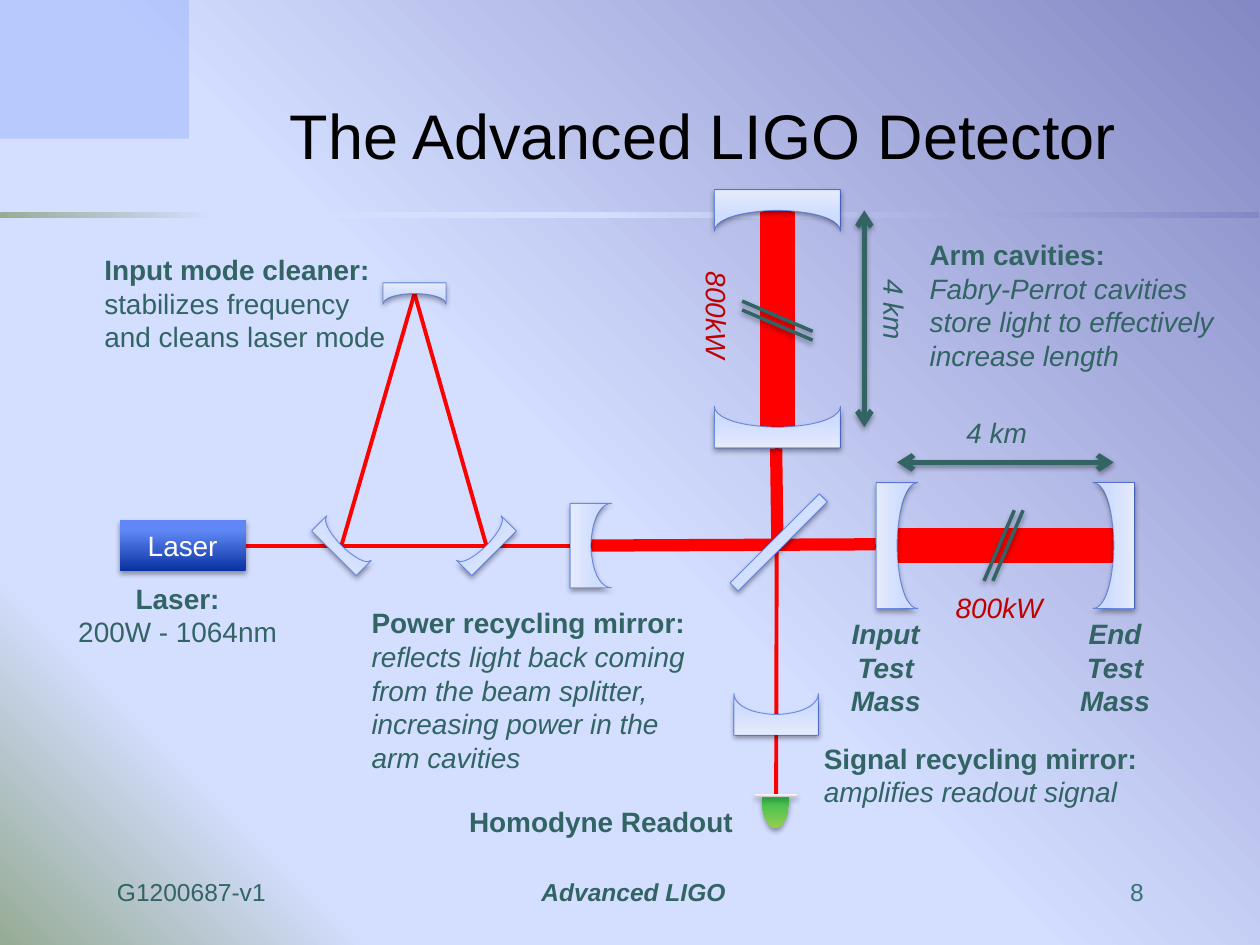
from lxml.etree import SubElement
from pptx import Presentation
from pptx.dml.color import RGBColor
from pptx.enum.shapes import MSO_CONNECTOR, MSO_SHAPE
from pptx.enum.text import MSO_ANCHOR, PP_ALIGN
from pptx.oxml.ns import qn
from pptx.util import Inches, Pt

THEME = {
    "font": "Arial", "title_size": 36, "label_size": 16, "footer_size": 14,
    "title": "000000", "text": "326464", "page": "377373", "power": "C00000",
    "white": "FFFFFF", "beam": "FF0000", "corner": "7095FD", "edge": "0337C6",
    "backdrop": [(0, "8488C4"), (53, "D4DEFF"), (83, "D4DEFF"), (100, "96AB94")],
    "laser": [(0, "0A31A1"), (80, "5F87F5"), (100, "5F87F5")],
    "glass": [(0, "CFDCFE"), (35, "CFDCFE"), (100, "E4EBFC")],
    "diode": [(0, "92D050"), (80, "00B050"), (100, "F8F8F8")],
    "metal": [(0, "BEBEBE"), (80, "F7F7F7"), (100, "F8F8F8")],
}


def paint_gradient(fill, parent, stops, angle=None):
    """Fill with several stops; without an angle, radiate from the top right."""
    fill.solid()
    old = parent.find(qn("a:solidFill"))
    gradient = parent.makeelement(qn("a:gradFill"), {"rotWithShape": "1"})
    stop_list = SubElement(gradient, qn("a:gsLst"))
    for position, color in stops:
        stop = SubElement(stop_list, qn("a:gs"), pos=str(position * 1000))
        SubElement(stop, qn("a:srgbClr"), val=color)
    if angle is None:
        radial = SubElement(gradient, qn("a:path"), {"path": "circle"})
        SubElement(radial, qn("a:fillToRect"), l="100000", b="100000")
    else:
        SubElement(gradient, qn("a:lin"), ang=str(angle * 60000), scaled="0")
    parent.replace(old, gradient)


def finish_shadow(shape, cast):
    """Replace the inherited effect with a soft drop shadow or with nothing."""
    effects = SubElement(shape._element.spPr, qn("a:effectLst"))
    if cast:
        shadow = SubElement(effects, qn("a:outerShdw"), blurRad=str(Pt(3.1)),
                            dist=str(Pt(1.7)), dir="5400000", rotWithShape="0")
        black = SubElement(shadow, qn("a:srgbClr"), val="000000")
        SubElement(black, qn("a:alpha"), val="36000")


prs = Presentation()
prs.slide_width, prs.slide_height = Inches(10), Inches(7.5)
slide = prs.slides.add_slide(prs.slide_layouts[5])
shapes = slide.shapes
background = slide.background.fill
background.solid()
paint_gradient(background, slide.element.find(".//" + qn("p:bgPr")), THEME["backdrop"], 135)

# Backdrop band and corner
band = shapes.add_shape(MSO_SHAPE.RECTANGLE, 0, Inches(1.69), Inches(9.99), Inches(0.04))
paint_gradient(band.fill, band._element.spPr, THEME["backdrop"])
corner = shapes.add_shape(MSO_SHAPE.RECTANGLE, 0, 0, Inches(1.5), Inches(1.1))
corner.fill.solid()
corner.fill.fore_color.rgb = RGBColor.from_string(THEME["corner"])
SubElement(corner._element.spPr.find(".//" + qn("a:srgbClr")), qn("a:alpha"), val="28000")
for backdrop_part in (band, corner):
    backdrop_part.line.fill.background()
    finish_shadow(backdrop_part, False)

title = shapes.title
title.left, title.top, title.width, title.height = map(Inches, (1.83, 0.58, 7.5, 0.84))
title.text_frame.text = "The Advanced LIGO Detector"
title.text_frame.vertical_anchor = MSO_ANCHOR.BOTTOM
title.text_frame.paragraphs[0].alignment = PP_ALIGN.CENTER
title_font = title.text_frame.paragraphs[0].runs[0].font
title_font.name, title_font.size = THEME["font"], Pt(THEME["title_size"])
title_font.color.rgb = RGBColor.from_string(THEME["title"])

# Beams lie under the optics; arrows and break marks lie over the beams.
beams = [
    (4.69, 4.33, 6.95, 4.32, 7), (6.17, 1.67, 6.17, 3.4, 20),
    (6.16, 3.56, 6.17, 4.32, 7), (8.84, 4.33, 7.12, 4.33, 20),
    (1.95, 4.33, 8.84, 4.33, 2.25), (3.29, 2.33, 2.71, 4.33, 2.25),
    (3.29, 2.33, 3.86, 4.33, 2.25), (6.17, 1.67, 6.16, 6.31, 2.25),
]
arm_lengths = [(6.86, 1.67, 6.86, 3.39, 3), (7.12, 3.67, 8.84, 3.67, 3)]
breaks = [(8.05 + shift, 4.05, 7.81 + shift, 4.61, 2) for shift in (0, 0.07)]
breaks += [(5.89, 2.39 + shift, 6.45, 2.63 + shift, 2) for shift in (0, 0.07)]

lines = [(beam, "beam", False) for beam in beams]
lines += [(length, "text", True) for length in arm_lengths]
lines += [(mark, "text", False) for mark in breaks]
for (*ends, weight), color, arrows in lines:
    ray = shapes.add_connector(MSO_CONNECTOR.STRAIGHT, *map(Inches, ends))
    ray.line.width = Pt(weight)
    ray.line.color.rgb = RGBColor.from_string(THEME[color])
    if arrows:
        for end in ("a:headEnd", "a:tailEnd"):
            SubElement(ray.line._get_or_add_ln(), qn(end), type="arrow")
    finish_shadow(ray, color == "text")

# Mirrors: centre x, centre y, width, height, rotation
mirrors = [
    (3.29, 2.33, 0.5, 0.17, 0), (2.71, 4.33, 0.5, 0.17, 225), (3.86, 4.33, 0.5, 0.17, 135),
    (7.12, 4.33, 1, 0.33, 270), (8.84, 4.33, 1, 0.33, 90),
    (6.17, 3.39, 1, 0.33, 180), (6.17, 1.67, 1, 0.33, 0),
    (4.69, 4.33, 0.67, 0.33, 270), (6.16, 5.67, 0.67, 0.33, 180),
]
# Control points of the concave face as fractions of width and height
half_face = [(0, 1), (0, 0.77), (0.14, 0.59), (0.34, 0.53), (0.39, 0.51), (0.45, 0.5)]
face = half_face + [(0.5, 0.5)] + [(1 - u, v) for u, v in reversed(half_face)]
optics = []
for x, y, width, height, rotation in mirrors:
    left, top = x - width / 2, y - height / 2
    outline = shapes.build_freeform(Inches(left), Inches(top))
    outline.add_line_segments([(Inches(left + u * width), Inches(top + v * height))
                               for u, v in face + [(1, 0), (0.5, 0)]])
    mirror = outline.convert_to_shape()
    mirror.rotation = rotation
    segments = mirror._element.findall(".//" + qn("a:lnTo"))[1:len(face)]
    for first in range(0, len(segments), 3):
        curve = segments[first].makeelement(qn("a:cubicBezTo"), {})
        segments[first].addprevious(curve)
        for segment in segments[first:first + 3]:
            curve.append(segment[0])
            segment.getparent().remove(segment)
    optics.append((mirror, "glass", 270, True))

devices = [
    (MSO_SHAPE.PIE, 5.91, 6.22, 0.49, 0.22, 270, "diode", 0),
    (MSO_SHAPE.RECTANGLE, 6.15, 6.15, 0.02, 0.33, 270, "metal", 0),
    (MSO_SHAPE.RECTANGLE, 5.68, 4.26, 1, 0.09, 135, "glass", 270),
    (MSO_SHAPE.RECTANGLE, 0.95, 4.13, 1, 0.4, 0, "laser", 270),
]
for kind, left, top, width, height, rotation, material, angle in devices:
    device = shapes.add_shape(kind, *map(Inches, (left, top, width, height)))
    device.rotation = rotation
    if kind == MSO_SHAPE.PIE:
        device.adjustments[0], device.adjustments[1] = 53.41, 162
    optics.append((device, material, angle, material == "glass"))
laser = device

for optic, material, angle, edged in optics:
    paint_gradient(optic.fill, optic._element.spPr, THEME[material], angle)
    if edged:
        optic.line.width = Pt(0.5)
        optic.line.color.rgb = RGBColor.from_string(THEME["edge"])
        edge_color = optic.line._get_or_add_ln().find(".//" + qn("a:srgbClr"))
        SubElement(edge_color, qn("a:alpha"), val="50000")
    else:
        optic.line.fill.background()
    finish_shadow(optic, True)

# Labels: box (none for the laser's own text), rotation, wrap, alignment, colour,
# paragraphs of (text, style) runs
LEFT, CENTER = PP_ALIGN.LEFT, PP_ALIGN.CENTER
labels = [
    (None, 0, True, CENTER, "white", [[("Laser", "")]]),
    ((0.51, 4.56, 1.8, 0.64), 0, False, CENTER, "text",
     [[("Laser:", "b")], [("200W - 1064nm", "")]]),
    ((0.73, 1.95, 2.46, 0.91), 0, False, LEFT, "text",
     [[("Input mode cleaner:", "b")], [("stabilizes frequency", "")],
      [("and cleans laser mode", "")]]),
    ((7.28, 1.83, 2.47, 1.18), 0, True, LEFT, "text",
     [[("Arm cavities:", "b")],
      [("Fabry-Perrot cavities store light to effectively increase length", "i")]]),
    ((3.52, 6.33, 2.5, 0.37), 0, True, CENTER, "text", [[("Homodyne Readout", "b")]]),
    ((6.44, 5.83, 2.79, 0.64), 0, True, LEFT, "text",
     [[("Signal recycling mirror: ", "b"), ("amplifies readout signal", "i")]]),
    ((2.85, 4.75, 2.79, 1.45), 0, True, LEFT, "text",
     [[("Power recycling mirror: ", "b"),
       ("reflects light back coming from the beam splitter, "
        "increasing power in the arm cavities", "i")]]),
    ((6.6, 1.96, 1, 1), 90, False, CENTER, "text", [[("4 km", "i")]]),
    ((7.41, 2.93, 1, 1), 0, False, CENTER, "text", [[("4 km", "i")]]),
    ((7.43, 4.32, 1, 1), 0, False, CENTER, "power", [[("800kW", "i")]]),
    ((5.19, 2, 1, 1), 90, False, CENTER, "power", [[("800kW", "i")]]),
]
for left, mass in ((6.65, "Input"), (8.47, "End")):
    labels.append(((left, 4.84, 0.76, 0.91), 0, False, CENTER, "text",
                   [[(word, "bi")] for word in (mass, "Test", "Mass")]))
footer_runs = [("G1200687-v1\t", ""), ("Advanced LIGO\t", "bi"), ("8", "")]
labels.append(((0.83, 6.91, 8.42, 0.34), 0, True, LEFT, "text", [footer_runs]))

for box, rotation, wrap, alignment, color, paragraphs in labels:
    label = shapes.add_textbox(*map(Inches, box)) if box else laser
    label.rotation = rotation
    frame = label.text_frame
    frame.word_wrap, frame.vertical_anchor = wrap, MSO_ANCHOR.MIDDLE
    is_footer = paragraphs[0] is footer_runs
    for index, runs in enumerate(paragraphs):
        paragraph = frame.add_paragraph() if index else frame.paragraphs[0]
        paragraph.alignment = alignment
        for text, style in runs:
            run = paragraph.add_run()
            run.text = text
            size = THEME["footer_size" if is_footer else "label_size"]
            font_format = {"name": THEME["font"], "size": Pt(size),
                           "bold": "b" in style, "italic": "i" in style}
            for attribute, value in font_format.items():
                setattr(run.font, attribute, value)
            run_color = "page" if text == "8" else color
            run.font.color.rgb = RGBColor.from_string(THEME[run_color])
    if is_footer:
        tabs = SubElement(paragraph._p.get_or_add_pPr(), qn("a:tabLst"))
        for position, side in ((4.1, "ctr"), (8.15, "r")):
            SubElement(tabs, qn("a:tab"), pos=str(Inches(position)), algn=side)

prs.save("out.pptx")
